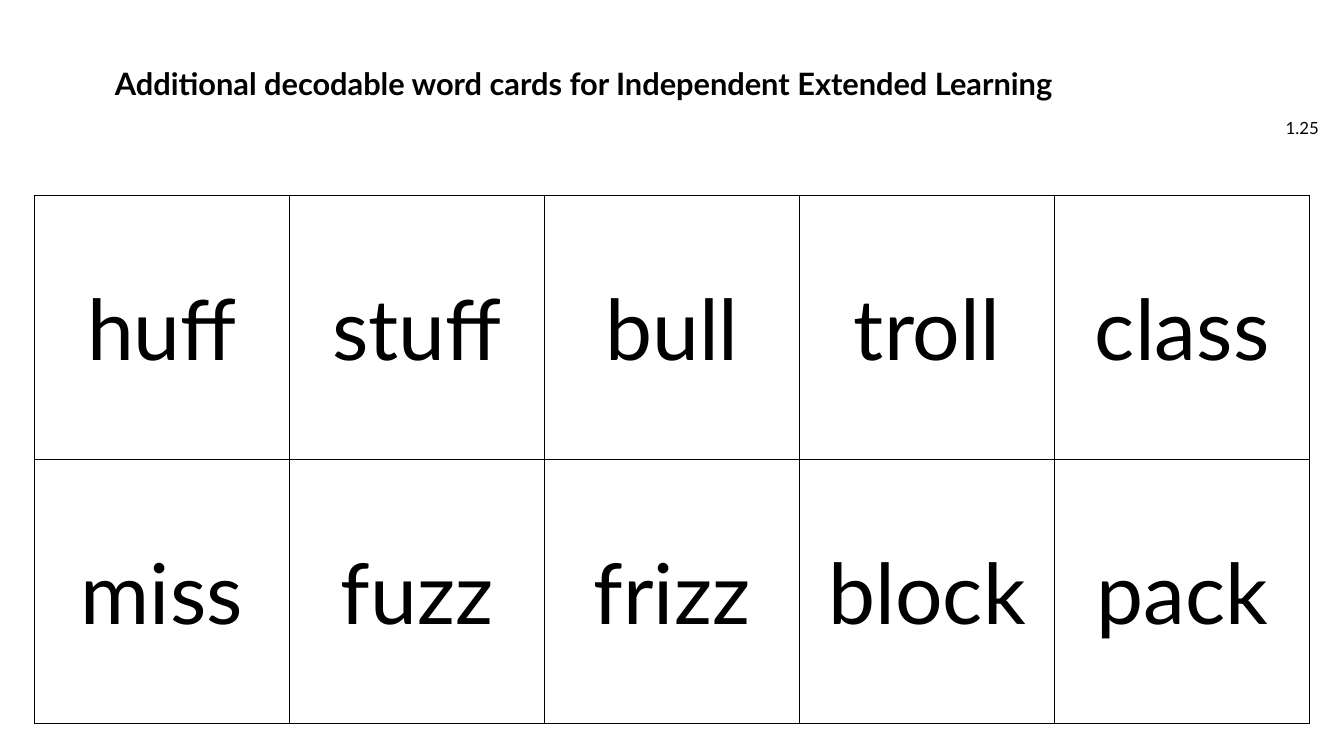
from lxml import etree
from pptx import Presentation
from pptx.dml.color import RGBColor
from pptx.enum.text import MSO_ANCHOR, MSO_AUTO_SIZE, PP_ALIGN
from pptx.oxml.ns import qn
from pptx.util import Inches, Pt

BLACK = RGBColor(0x00, 0x00, 0x00)
WHITE = RGBColor(0xFF, 0xFF, 0xFF)
CENTER, RIGHT = PP_ALIGN.CENTER, PP_ALIGN.RIGHT
MIDDLE = MSO_ANCHOR.MIDDLE
NO_AUTOFIT = MSO_AUTO_SIZE.NONE
FONT = "Lato"
TITLE_ONLY = 5

CARD_WIDTH, CARD_HEIGHT = Inches(2.53), Inches(2.62)
WORDS = [
    ["huff", "stuff", "bull", "troll", "class"],
    ["miss", "fuzz", "frizz", "block", "pack"],
]


def format_text(frame, text, size, align, bold=False):
    frame.text = text
    para = frame.paragraphs[0]
    para.alignment = align
    for span in para.runs:
        span.font.name = FONT
        span.font.size = Pt(size)
        span.font.bold = bold
        span.font.color.rgb = BLACK


def set_borders(cell, width=Pt(1), color=BLACK):
    properties = cell._tc.get_or_add_tcPr()
    # Borders come before the fill in the cell properties
    for index, side in enumerate(("a:lnL", "a:lnR", "a:lnT", "a:lnB")):
        line = etree.Element(qn(side), w=str(width))
        fill = etree.SubElement(line, qn("a:solidFill"))
        etree.SubElement(fill, qn("a:srgbClr"), val=str(color))
        properties.insert(index, line)


def add_title(page, text):
    title = page.shapes.title
    title.left, title.top = Inches(0.75), Inches(0.64)
    title.width, title.height = Inches(10.08), Inches(0.41)
    frame = title.text_frame
    format_text(frame, text, 22, CENTER, bold=True)
    frame.word_wrap = True
    frame.auto_size = NO_AUTOFIT
    frame.vertical_anchor = MIDDLE
    frame.paragraphs[0].line_spacing = 0.9


def add_lesson_number(page, text):
    box = page.shapes.add_textbox(Inches(12.55), Inches(1.07), Inches(0.63), Inches(0.4))
    frame = box.text_frame
    frame.word_wrap = True
    frame.vertical_anchor = MIDDLE
    format_text(frame, text, 12, RIGHT)


def add_word_cards(page, words):
    rows, columns = len(words), len(words[0])
    table = page.shapes.add_table(
        rows, columns, Inches(0.34), Inches(1.94),
        CARD_WIDTH * columns, CARD_HEIGHT * rows).table
    table.first_row = table.horz_banding = False
    for column in table.columns:
        column.width = CARD_WIDTH
    for row, row_words in zip(table.rows, words):
        row.height = CARD_HEIGHT
        for cell, word in zip(row.cells, row_words):
            cell.fill.solid()
            cell.fill.fore_color.rgb = WHITE
            cell.vertical_anchor = MIDDLE
            format_text(cell.text_frame, word, 60, CENTER)
            set_borders(cell)


def main():
    deck = Presentation()
    deck.slide_width, deck.slide_height = Inches(13.33), Inches(7.5)
    page = deck.slides.add_slide(deck.slide_layouts[TITLE_ONLY])

    # Heading
    add_lesson_number(page, "1.25")
    add_title(page, "Additional decodable word cards for Independent Extended Learning")

    # Word cards
    add_word_cards(page, WORDS)
    deck.save("out.pptx")


if __name__ == "__main__":
    main()
